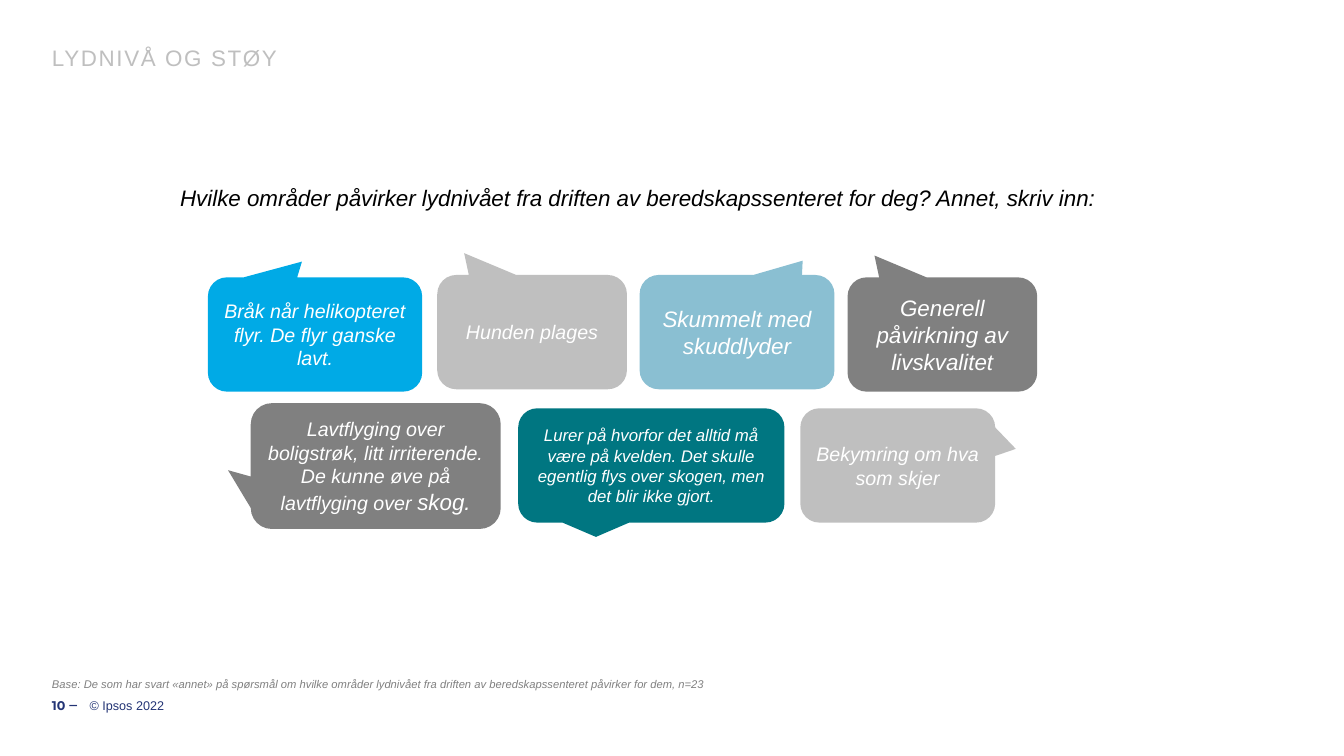
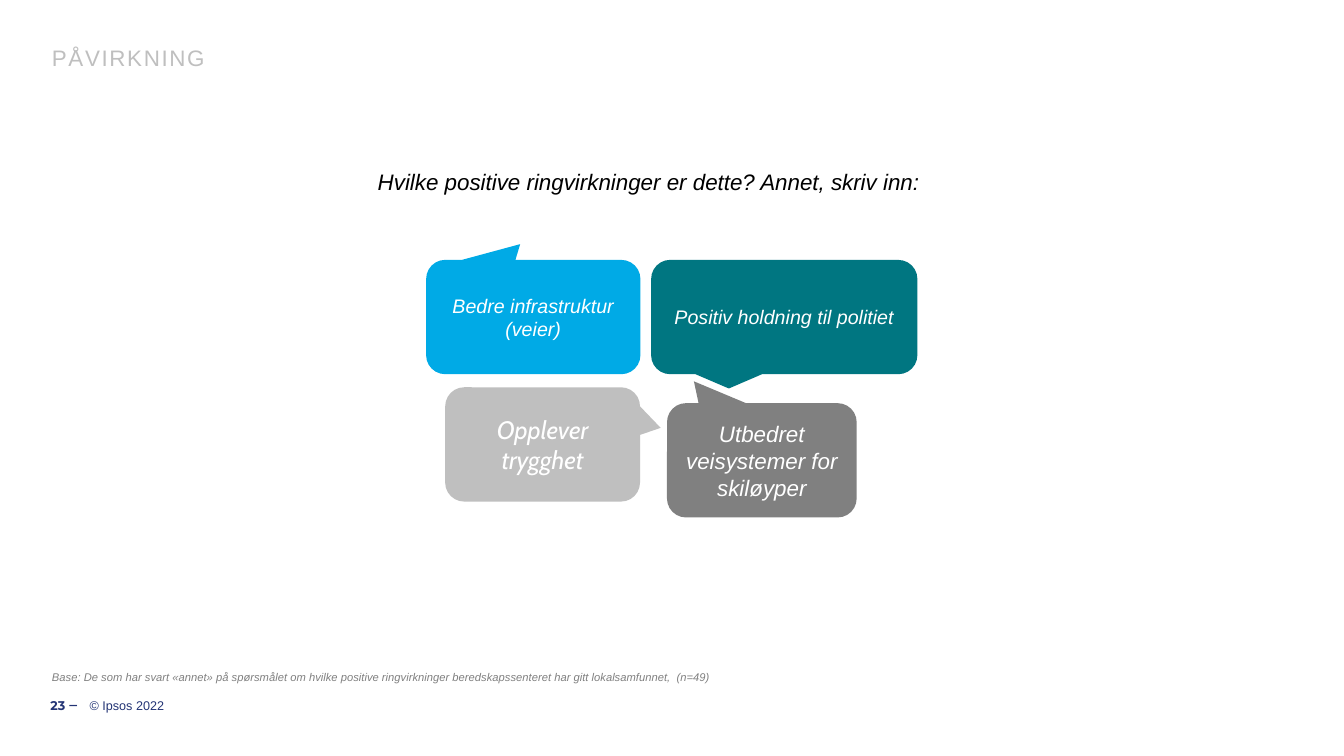
from pptx import Presentation
from pptx.dml.color import RGBColor
from pptx.enum import shapes, text
from pptx.util import Cm, Pt

COLOURS = {
    "blue": "00AAE6", "teal": "007681", "mist": "8ABFD2",
    "light": "BFBFBF", "dark": "808080",
    "navy": "233475", "black": "000000", "white": "FFFFFF",
}
LEFT = text.PP_ALIGN.LEFT
CENTER = text.PP_ALIGN.CENTER
RIGHT = text.PP_ALIGN.RIGHT
TOP = text.MSO_ANCHOR.TOP
MIDDLE = text.MSO_ANCHOR.MIDDLE
BOTTOM = text.MSO_ANCHOR.BOTTOM

COPYRIGHT = "© Ipsos 2022"

# Kind of bubble: colour, width, height (cm), tail tip as a share of the size
BUBBLES = {
    "blue": ("blue", 5.4, 2.88, (-0.061, -0.638)),
    "teal": ("teal", 6.71, 2.88, (-0.208, 0.625)),
    "mist": ("mist", 4.91, 2.88, (0.337, -0.625)),
    "light_right": ("light", 4.91, 2.88, (0.606, -0.145)),
    "light_up": ("light", 4.78, 2.88, (-0.358, -0.691)),
    "dark_up": ("dark", 4.78, 2.88, (-0.358, -0.691)),
    "dark_left": ("dark", 6.3, 3.17, (-0.591, 0.033)),
}
CORNER = 0.167

# Each answer: kind of bubble, left, top (cm), then (words, size, font) per run
SLIDES = [
    {
        "title": "LYDNIVÅ OG STØY",
        "page": "10 ‒",
        "question": "Hvilke områder påvirker lydnivået fra driften av "
                    "beredskapssenteret for deg? Annet, skriv inn:",
        "question_at": (4.34, 4.52, 25.4),
        "base": "Base: De som har svart «annet» på spørsmål om hvilke områder "
                "lydnivået fra driften av beredskapssenteret påvirker for dem, n=23",
        "base_top": 16.94,
        "answers": [
            ("blue", 5.24, 6.99,
             [("Bråk når helikopteret flyr. De flyr ganske lavt.", 14, "Arial")]),
            ("light_up", 11.02, 6.93, [("Hunden plages", 14, "Arial")]),
            ("mist", 16.12, 6.93, [("Skummelt med skuddlyder", 16, "Arial")]),
            ("dark_up", 21.36, 6.99,
             [("Generell påvirkning av livskvalitet", 16, "Arial")]),
            ("dark_left", 6.32, 10.16,
             [("Lavtflyging over boligstrøk, litt irriterende. "
               "De kunne øve på lavtflyging over ", 14, "Arial"),
              ("skog.", 16, "Arial")]),
            ("teal", 13.06, 10.29,
             [("Lurer på hvorfor det alltid må være på kvelden. Det skulle "
               "egentlig flys over skogen, men det blir ikke gjort.", 12, "Arial")]),
            ("light_right", 20.17, 10.29,
             [("Bekymring om hva som skjer", 14, "Arial")]),
        ],
    },
    {
        "title": "PÅVIRKNING",
        "page": "23 ‒",
        "question": "Hvilke positive ringvirkninger er dette? Annet, skriv inn:",
        "question_at": (9.32, 4.11, 22.4),
        "base": "Base: De som har svart «annet» på spørsmålet om hvilke positive "
                "ringvirkninger beredskapssenteret har gitt lokalsamfunnet,  (n=49)",
        "base_top": 16.76,
        "answers": [
            ("blue", 10.74, 6.55, [("Bedre infrastruktur (veier)", 14, "Arial")]),
            ("teal", 16.41, 6.55, [("Positiv holdning til politiet", 14, "Arial")]),
            ("light_right", 11.22, 9.76, [("Opplever trygghet", 18, "Cabin")]),
            ("dark_up", 16.81, 10.16,
             [("Utbedret veisystemer for skiløyper", 16, "Arial")]),
        ],
    },
]


def rgb(colour):
    return RGBColor.from_string(COLOURS[colour])


def style_run(run, size, colour, font="Arial", bold=False, italic=False):
    run.font.name = font
    run.font.size = Pt(size)
    run.font.bold = bold
    run.font.italic = italic
    run.font.color.rgb = rgb(colour)


def fill_box(box, at, words, size, colour, anchor=TOP, align=LEFT,
             insets=(0.2, 0.13, 0.2, 0.13), **style):
    """Place a text box or placeholder (cm) and set its one paragraph."""
    box.left, box.top, box.width, box.height = [Cm(length) for length in at]
    frame = box.text_frame
    frame.text = words
    frame.word_wrap = True
    frame.auto_size = text.MSO_AUTO_SIZE.NONE
    frame.vertical_anchor = anchor
    (frame.margin_left, frame.margin_top,
     frame.margin_right, frame.margin_bottom) = [Cm(inset) for inset in insets]
    paragraph = frame.paragraphs[0]
    paragraph.alignment = align
    style_run(paragraph.runs[0], size, colour, **style)
    return paragraph


def add_text(slide, at, *args, **options):
    box = slide.shapes.add_textbox(0, 0, 0, 0)
    return fill_box(box, at, *args, **options)


def add_title(slide, words):
    paragraph = fill_box(slide.shapes.title, (1.11, 1.07, 31.62, 0.86),
                         words, 16, "light")
    paragraph.line_spacing = 0.9
    paragraph.runs[0].font._element.set("spc", "120")


def add_footer(slide, page, base, base_top):
    add_text(slide, (1.11, base_top, 31.85, 0.59), base, 8, "dark",
             anchor=BOTTOM, insets=(0.2, 0.13, 0, 0.13), italic=True)
    add_text(slide, (1.07, 17.27, 0.99, 1.02), page, 9, "navy", anchor=MIDDLE,
             align=RIGHT, insets=(0, 0.13, 0.1, 0.13), font="Montserrat", bold=True)
    add_text(slide, (2.26, 17.27, 29.03, 1.02), COPYRIGHT, 9, "navy",
             anchor=MIDDLE, insets=(0, 0.13, 0, 0.13))


def add_answer(slide, kind, left, top, parts):
    colour, width, height, tail = BUBBLES[kind]
    bubble = slide.shapes.add_shape(
        shapes.MSO_SHAPE.ROUNDED_RECTANGULAR_CALLOUT,
        Cm(left), Cm(top), Cm(width), Cm(height))
    for index, value in enumerate((*tail, CORNER)):
        bubble.adjustments[index] = value
    bubble.shadow.inherit = False
    bubble.fill.solid()
    bubble.fill.fore_color.rgb = rgb(colour)
    bubble.line.fill.background()
    frame = bubble.text_frame
    frame.word_wrap = True
    frame.vertical_anchor = MIDDLE
    paragraph = frame.paragraphs[0]
    paragraph.alignment = CENTER
    for words, size, font in parts:
        run = paragraph.add_run()
        run.text = words
        style_run(run, size, "white", font, italic=True)


def main():
    deck = Presentation()
    deck.slide_width, deck.slide_height = Cm(33.87), Cm(19.05)
    title_only = deck.slide_layouts[5]
    for content in SLIDES:
        slide = deck.slides.add_slide(title_only)
        add_title(slide, content["title"])
        add_text(slide, (*content["question_at"], 0.81), content["question"],
                 16, "black", insets=(0.2, 0.13, 0.2, 0), italic=True)
        for answer in content["answers"]:
            add_answer(slide, *answer)
        add_footer(slide, content["page"], content["base"], content["base_top"])
    deck.save("out.pptx")


if __name__ == "__main__":
    main()
